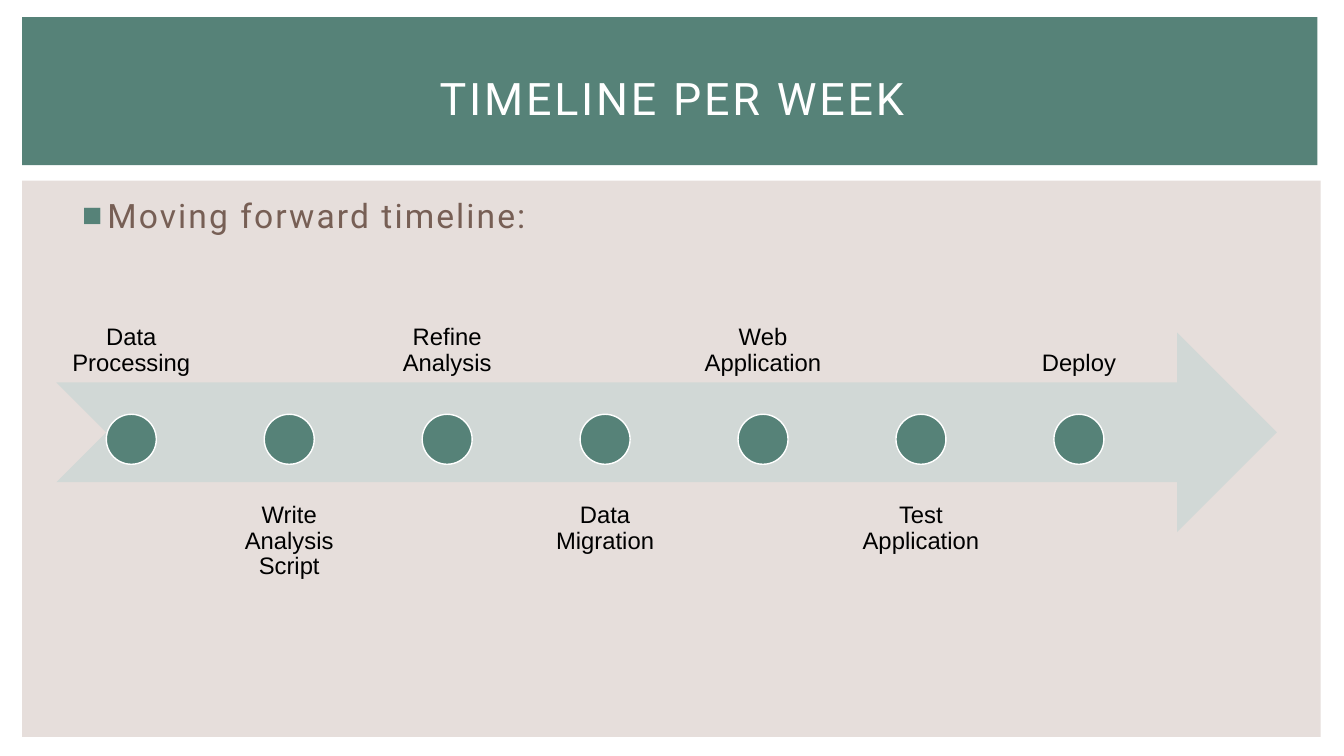
"""Build the weekly timeline slide."""
from lxml.etree import SubElement
from pptx import Presentation
from pptx.dml.color import RGBColor as Rgb
from pptx.enum.shapes import MSO_SHAPE as Kind
from pptx.enum.text import MSO_ANCHOR as Anchor, MSO_AUTO_SIZE as Auto, PP_ALIGN as Align
from pptx.oxml.ns import qn
from pptx.util import Cm, Pt

TITLE = "TIMELINE PER WEEK"
LEAD = "Moving forward timeline:"
STEPS = ["Data Processing", "Write Analysis Script", "Refine Analysis",
         "Data Migration", "Web Application", "Test Application", "Deploy"]
HEX = {"panel": "E6DEDB", "band": "568278", "arrow": "D1D8D6",
       "white": "FFFFFF", "black": "000000", "brown": "775F55"}
PANEL = (0.56, 4.55, 32.72, 14.02)
BAND = (0.56, 0.43, 32.64, 3.73)
ARROW = (1.42, 8.38, 30.76, 5.03)
HEAD = (1.42, 0.99, 31.04, 2.92)
BODY = (1.7, 4.78, 14.96, 12.24)
WIDE, TALL, PITCH = 3.78, 5.03, 3.98
ABOVE, BELOW = 4.78, 12.34
DOT, DOT_TOP = 1.26, 10.44
SIDES = ("margin_left", "margin_top", "margin_right", "margin_bottom")
FRAME = {"word_wrap": True, "auto_size": Auto.NONE}
LABEL = FRAME | dict.fromkeys(SIDES, Cm(0.33))


def color(name):
    return Rgb.from_string(HEX[name])


def apply(item, style):
    for key, value in style.items():
        setattr(item, key, value)


def draw(shapes, kind, box, fill, edge=None):
    shape = shapes.add_shape(kind, *map(Cm, box))
    shape.shadow.inherit = False
    shape.fill.solid()
    shape.fill.fore_color.rgb = color(fill)
    if edge:
        shape.line.color.rgb = color(edge)
        shape.line.width = Pt(1)
    else:
        shape.line.fill.background()


def write(shape, text, frame, para, font, tint, gap=0):
    apply(shape.text_frame, frame)
    line = shape.text_frame.paragraphs[0]
    apply(line, para)
    run = line.add_run()
    run.text = text
    apply(run.font, font)
    run.font.color.rgb = color(tint)
    if gap:
        for props in shape.element.iter(qn("a:rPr")):
            props.set("spc", str(gap))


def bullet(shape):
    for props in shape.element.iter(qn("a:pPr")):
        props.set("marL", str(Cm(0.76)))
        props.set("indent", str(-Cm(0.64)))
        tint = SubElement(props, qn("a:buClr"))
        SubElement(tint, qn("a:srgbClr"), val=HEX["band"])
        SubElement(props, qn("a:buFont"), typeface="Arial")
        SubElement(props, qn("a:buChar"), char="■")


def main():
    deck = Presentation()
    apply(deck, {"slide_width": Cm(33.87), "slide_height": Cm(19.05)})
    slide = deck.slides.add_slide(deck.slide_layouts[5])
    shapes = slide.shapes
    draw(shapes, Kind.RECTANGLE, PANEL, "panel")
    draw(shapes, Kind.RECTANGLE, BAND, "band")

    parts = shapes.add_group_shape().shapes
    draw(parts, Kind.NOTCHED_RIGHT_ARROW, ARROW, "arrow")
    para = {"alignment": Align.CENTER, "line_spacing": 0.9, "space_after": Pt(6)}
    for i, step in enumerate(STEPS):
        left = ARROW[0] + i * PITCH
        top, anchor = (BELOW, Anchor.TOP) if i % 2 else (ABOVE, Anchor.BOTTOM)
        label = parts.add_textbox(*map(Cm, (left, top, WIDE, TALL)))
        write(label, step, LABEL | {"vertical_anchor": anchor}, para,
              {"name": "Arial", "size": Pt(17)}, "black")
        spot = (left + (WIDE - DOT) / 2, DOT_TOP, DOT, DOT)
        draw(parts, Kind.OVAL, spot, "band", "white")

    lead = shapes.add_textbox(*map(Cm, BODY))
    write(lead, LEAD, FRAME, {"space_before": Pt(4.8)},
          {"name": "Roboto", "size": Pt(24)}, "brown", 150)
    bullet(lead)

    title = shapes.title
    apply(title, dict(zip(("left", "top", "width", "height"), map(Cm, HEAD))))
    write(title, TITLE, FRAME | {"vertical_anchor": Anchor.MIDDLE},
          {"alignment": Align.CENTER}, {"name": "Roboto", "size": Pt(32)}, "white", 200)
    title.element.getparent().append(title.element)
    deck.save("out.pptx")


if __name__ == "__main__":
    main()
